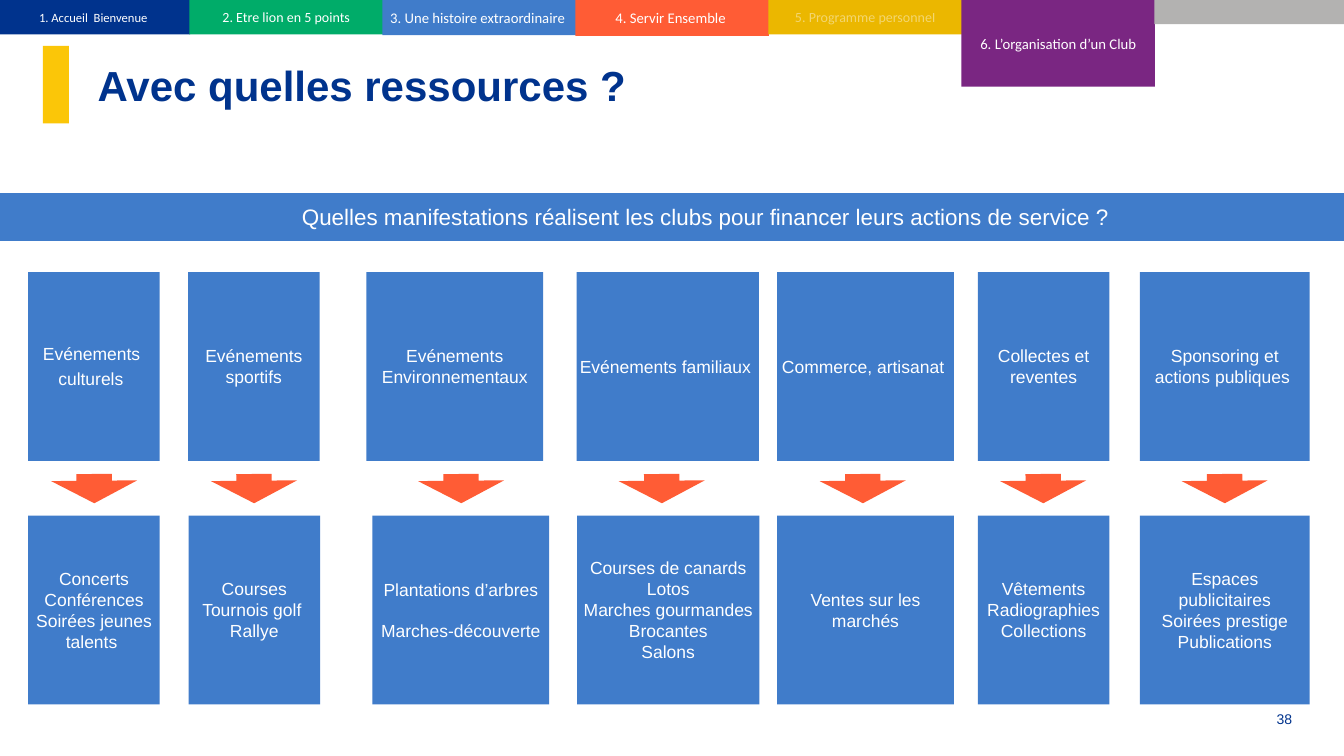
from lxml.etree import SubElement
from pptx import Presentation
from pptx.dml.color import RGBColor
from pptx.enum.shapes import MSO_SHAPE
from pptx.enum.text import MSO_ANCHOR, PP_ALIGN
from pptx.oxml.ns import qn
from pptx.util import Pt

NAVY = RGBColor(0x00, 0x33, 0x8D)
GREEN = RGBColor(0x00, 0xAC, 0x69)
BLUE = RGBColor(0x40, 0x7C, 0xCA)
CORAL = RGBColor(0xFF, 0x5C, 0x35)
GOLD = RGBColor(0xEB, 0xB7, 0x00)
YELLOW = RGBColor(0xFB, 0xC6, 0x08)
PURPLE = RGBColor(0x7A, 0x26, 0x82)
GREY = RGBColor(0xB3, 0xB2, 0xB1)
WHITE = RGBColor(0xFF, 0xFF, 0xFF)

TAB_STEP, TAB_WIDTH = 275.7, 276.5
TABS = [  # label, text size, height, fill
    ("1. Accueil  Bienvenue", 18, 49, NAVY),
    ("2. Etre lion en 5 points", 20, 49, GREEN),
    ("3. Une histoire extraordinaire ", 21, 50.4, BLUE),
    ("4. Servir Ensemble ", 21, 51.1, CORAL),
    ("5. Programme personnel", 20, 49, GOLD),
    ("6. L’organisation d’un Club", 21, 123.8, PURPLE),
    ("", 20, 34.6, GREY),
]
FADED = 4

CARD_TOP, CARD_LOW, CARD_HEIGHT = 388.8, 736.6, 269.5
ARROW_MID = 698
CARDS = [  # upper left, lower left, width, arrow centre, event, examples
    (40.3, 40.3, 187.9, 134.6, ["Evénements ", "culturels"],
     ["Concerts Conférences", "Soirées jeunes talents "]),
    (268.6, 269.3, 187.9, 362.9, ["Evénements sportifs"],
     ["Courses", "Tournois golf ", "Rallye"]),
    (523.4, 532.1, 252.4, 658.8, ["Evénements Environnementaux"],
     ["Plantations d’arbres", "Marches-découverte"]),
    (823.7, 824.4, 260.3, 945.4, ["Evénements familiaux "],
     ["Courses de canards", "Lotos", "Marches gourmandes", "Brocantes",
      "Salons"]),
    (1110.2, 1110.2, 252.4, 1232.6, ["Commerce, artisanat "],
     ["Ventes sur les marchés"]),
    (1396.8, 1396.8, 187.9, 1490.4, ["Collectes et reventes"],
     ["Vêtements", "Radiographies", "Collections"]),
    (1628.6, 1628.6, 242.3, 1749.6, ["Sponsoring et actions publiques "],
     ["Espaces publicitaires", "Soirées prestige", "Publications"]),
]


class Deck:
    def __init__(self, slide):
        self.slide = slide
        self.font = {"name": "Arial", "size": Pt(25), "color": WHITE}

    def add_text(self, shape, lines, inset=4.5, align=PP_ALIGN.CENTER,
                 wrap=True, anchor=MSO_ANCHOR.MIDDLE, **style):
        frame = shape.text_frame
        frame.word_wrap = wrap
        frame.vertical_anchor = anchor
        for side in ("left", "right", "top", "bottom"):
            setattr(frame, f"margin_{side}", Pt(inset))
        for i, line in enumerate(lines):
            para = frame.add_paragraph() if i else frame.paragraphs[0]
            para.alignment = align
            self.add_run(para, line, **style)

    def add_run(self, para, text, **style):
        run = para.add_run()
        run.text = text
        for key, value in {**self.font, **style}.items():
            if key == "color":
                run.font.color.rgb = value
            else:
                setattr(run.font, key, value)

    def shape(self, kind, x, y, w, h, fill):
        shape = self.slide.shapes.add_shape(kind, Pt(x), Pt(y), Pt(w), Pt(h))
        shape.shadow.inherit = False
        shape.fill.solid()
        shape.fill.fore_color.rgb = fill
        shape.line.fill.background()
        return shape

    def block(self, x, y, w, h, fill, lines=(), **style):
        shape = self.shape(MSO_SHAPE.RECTANGLE, x, y, w, h, fill)
        if lines:
            self.add_text(shape, lines, **style)
        return shape

    def arrow(self, mid_x, mid_y, w=123.1, h=41.8):
        shape = self.shape(MSO_SHAPE.DOWN_ARROW, mid_x - w / 2, mid_y - h / 2,
                           w, h, CORAL)
        shape.adjustments[0] = 0.41
        shape.adjustments[1] = 0.77
        shape.rotation = 359.5

    def label(self, x, y, w, h, text, **style):
        box = self.slide.shapes.add_textbox(Pt(x), Pt(y), Pt(w), Pt(h))
        self.add_text(box, [text], inset=7.2, align=PP_ALIGN.LEFT, color=NAVY,
                      **style)


def fade(shape, percent):
    """Set the opacity of a shape's text colour."""
    for color in shape.element.txBody.iter(qn("a:srgbClr")):
        SubElement(color, qn("a:alpha")).set("val", str(percent * 1000))


def main():
    prs = Presentation()
    prs.slide_width, prs.slide_height = Pt(1920), Pt(1080)
    deck = Deck(prs.slides.add_slide(prs.slide_layouts[6]))

    deck.label(132.5, 80, 1488, 81.4, "Avec quelles ressources ?",
               size=Pt(60), bold=True)
    deck.block(61.2, 65.5, 37.4, 110.9, YELLOW)
    deck.label(1816.6, 1008, 37.4, 36.7, "38", size=Pt(20), wrap=False,
               anchor=MSO_ANCHOR.TOP)
    deck.block(-31.7, 275.8, 2088.7, 68.4, BLUE,
               ["Quelles manifestations réalisent les clubs pour financer "
                "leurs actions de service ? "], size=Pt(32))

    upper, lower = [], []
    for top_x, low_x, width, mid, event, samples in CARDS:
        upper.append(deck.block(top_x, CARD_TOP, width, CARD_HEIGHT, BLUE,
                                event))
        lower.append(deck.block(low_x, CARD_LOW, width, CARD_HEIGHT, BLUE,
                                samples))
        deck.arrow(mid, ARROW_MID)
    deck.add_run(upper[0].text_frame.paragraphs[1], " ", size=Pt(32))
    lower[2].text_frame.paragraphs[1].space_before = Pt(28.75)

    tabs = [deck.block(TAB_STEP * i - 5, 0, TAB_WIDTH, height, fill,
                       [text] if text else (), inset=3.6, name="Calibri",
                       size=Pt(size))
            for i, (text, size, height, fill) in enumerate(TABS)]
    fade(tabs[FADED], 44)

    prs.save("out.pptx")


if __name__ == "__main__":
    main()
